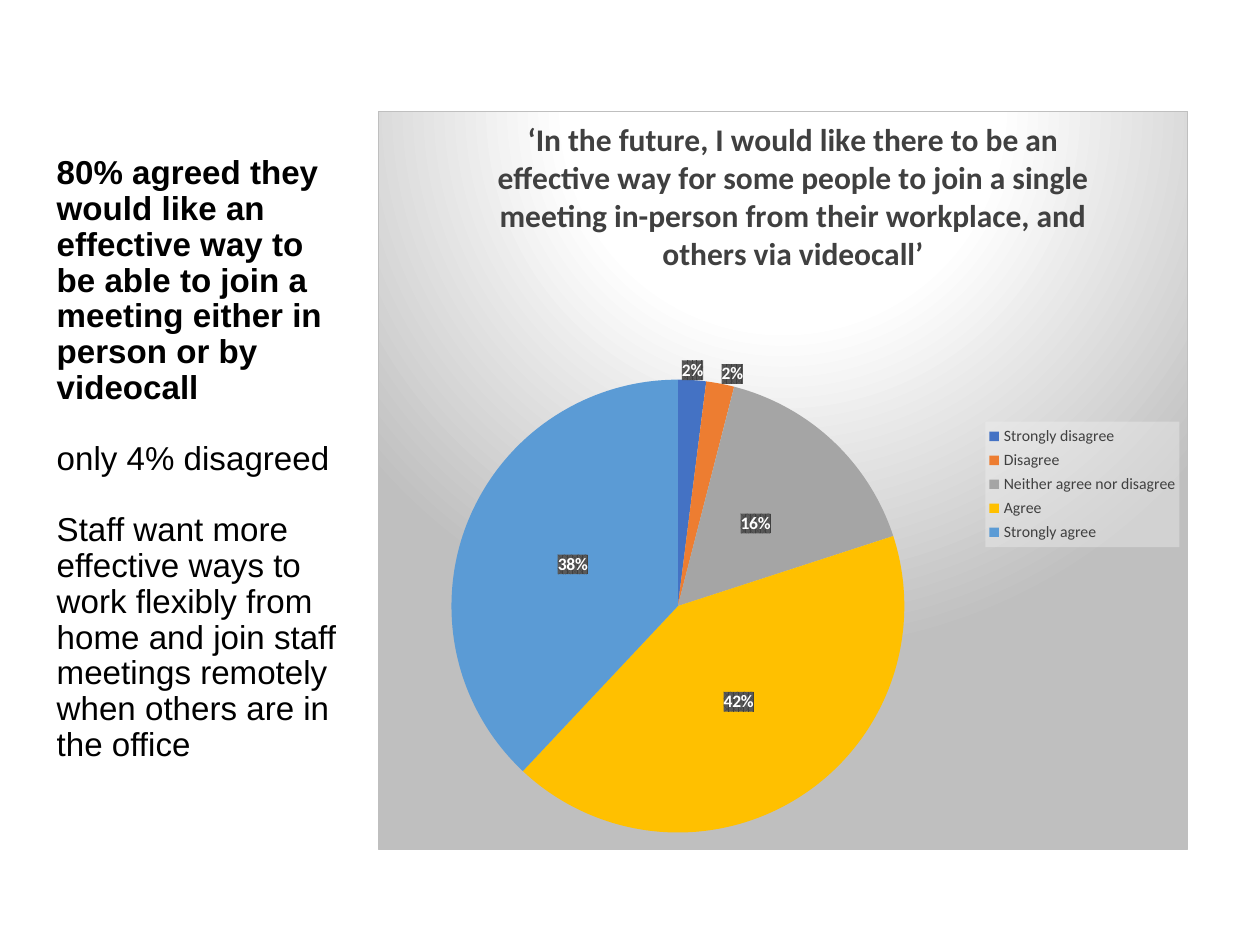
from dataclasses import dataclass

from lxml import etree
from pptx import Presentation
from pptx.chart.data import CategoryChartData
from pptx.dml.color import RGBColor
from pptx.enum.chart import XL_CHART_TYPE, XL_LABEL_POSITION, XL_LEGEND_POSITION
from pptx.enum.text import MSO_ANCHOR, MSO_AUTO_SIZE, PP_ALIGN
from pptx.oxml import parse_xml
from pptx.oxml.ns import nsdecls, qn
from pptx.util import Pt

PIE = XL_CHART_TYPE.PIE
CENTER, OUTSIDE = XL_LABEL_POSITION.CENTER, XL_LABEL_POSITION.OUTSIDE_END
RIGHT = XL_LEGEND_POSITION.RIGHT
LEFT = PP_ALIGN.LEFT
MIDDLE = MSO_ANCHOR.MIDDLE
NO_AUTOFIT = MSO_AUTO_SIZE.NONE

EMU_PER_PX = 9144  # 100 px to the inch
TITLE_ONLY = 5
COLORS = {
    "black": "000000", "white": "FFFFFF", "ink": "404040",
    "label_hatch": "595959", "edge": "BFBFBF", "legend": "F2F2F2",
    "blue": "4472C4", "orange": "ED7D31", "grey": "A5A5A5",
    "gold": "FFC000", "sky": "5B9BD5",
}


@dataclass(frozen=True)
class Answer:
    name: str
    percent: int
    color: str
    label_position: object = CENTER


@dataclass(frozen=True)
class Finding:
    text: str
    bold: bool = False


ANSWERS = [
    Answer("Strongly disagree", 2, "blue", OUTSIDE),
    Answer("Disagree", 2, "orange", OUTSIDE),
    Answer("Neither agree nor disagree", 16, "grey"),
    Answer("Agree", 42, "gold"),
    Answer("Strongly agree", 38, "sky"),
]
FINDINGS = [
    Finding("80% agreed they would like an effective way to be able to join "
            "a meeting either in person or by videocall", bold=True),
    Finding("only 4% disagreed"),
    Finding("Staff want more effective ways to work flexibly from home and join "
            "staff meetings remotely when others are in the office"),
]
QUESTION = ("‘In the future, I would like there to be an effective way for some people "
            "to join a single meeting in-person from their workplace, and others "
            "via videocall’")


def px(length: int) -> int:
    return length * EMU_PER_PX


def format_font(font, size: float, color: str, name: str = "Calibri",
                bold: bool = False) -> None:
    font.name, font.size, font.bold = name, Pt(size), bold
    font.color.rgb = RGBColor.from_string(COLORS[color])


def write_text(paragraph, text: str, *, size: float, color: str,
               name: str = "Calibri", bold: bool = False, align=None,
               line_spacing=None, space_after=None) -> None:
    run = paragraph.add_run()
    run.text = text
    format_font(run.font, size, color, name, bold)
    paragraph.alignment = align
    paragraph.line_spacing = line_spacing
    paragraph.space_after = space_after


def place_part(part, after: str = "", target: str = "", mode: str = "edge",
               **fractions: float) -> None:
    """Give a chart part a manual layout, in fractions of the chart."""
    for old in part.findall(qn("c:layout")):
        part.remove(old)
    layout = etree.Element(qn("c:layout"))
    manual = etree.SubElement(layout, qn("c:manualLayout"))
    settings = {"layoutTarget": target} if target else {}
    settings |= {f"{key}Mode": mode for key in ("x", "y")}
    settings |= fractions
    for tag, value in settings.items():
        etree.SubElement(manual, qn(f"c:{tag}")).set("val", str(value))
    if after:
        part.find(qn(after)).addnext(layout)
    else:
        part.insert(0, layout)


def paint_part(part, fill_xml: str) -> None:
    """Put shape properties before the text properties of a chart part."""
    part.find(qn("c:txPr")).addprevious(
        parse_xml(f'<c:spPr {nsdecls("c", "a")}>{fill_xml}</c:spPr>'))


def color_xml(color: str, extra: str = "") -> str:
    return f'<a:srgbClr val="{COLORS[color]}">{extra}</a:srgbClr>'


def add_findings(slide) -> None:
    title = slide.shapes.title
    title.left, title.top, title.width, title.height = map(px, (35, 168, 242, 457))
    frame = title.text_frame
    frame.word_wrap, frame.auto_size = True, NO_AUTOFIT
    frame.vertical_anchor = MIDDLE
    frame.margin_right, frame.margin_bottom = 0, px(68)
    for i, finding in enumerate(FINDINGS):
        paragraph = frame.add_paragraph() if i else frame.paragraphs[0]
        last = i == len(FINDINGS) - 1
        write_text(paragraph, finding.text, size=18.9, color="black", name="Arial",
                   bold=finding.bold, align=LEFT, line_spacing=0.9,
                   space_after=Pt(0 if last else 20.4))


def format_labels(series, root) -> None:
    labels = series.data_labels
    labels.number_format, labels.number_format_is_linked = "0%", False
    labels.position = CENTER
    format_font(labels.font, 10, "white", bold=True)
    for i, answer in enumerate(ANSWERS):
        if answer.label_position != CENTER:
            label = series.points[i].data_label
            format_font(label.font, 10, "white", bold=True)
            label.position = answer.label_position

    hatch = (f'<a:pattFill prst="pct75"><a:fgClr>{color_xml("ink")}</a:fgClr>'
             f'<a:bgClr>{color_xml("label_hatch")}</a:bgClr></a:pattFill>')
    for part in root.xpath(".//c:dLbls | .//c:dLbl"):
        paint_part(part, hatch)
        part.find(qn("c:showVal")).set("val", "0")
        part.find(qn("c:showPercent")).set("val", "1")
    for part in root.xpath(".//c:dLbl"):
        place_part(part, after="c:idx", mode="factor", x=0, y=0.01)


def add_answer_chart(slide) -> None:
    data = CategoryChartData()
    data.categories = [answer.name for answer in ANSWERS]
    data.add_series("Series 1", [answer.percent for answer in ANSWERS])
    chart = slide.shapes.add_chart(PIE, *map(px, (300, 88, 643, 587)), data).chart
    format_font(chart.font, 10, "black")
    root = chart.element

    # Slices
    plot = chart.plots[0]
    plot.vary_by_categories = True
    series = plot.series[0]
    for i, answer in enumerate(ANSWERS):
        fill = series.points[i].format.fill
        fill.solid()
        fill.fore_color.rgb = RGBColor.from_string(COLORS[answer.color])
    format_labels(series, root)

    # Question
    chart.has_title = True
    write_text(chart.chart_title.text_frame.paragraphs[0], QUESTION,
               size=18, color="ink", bold=True)

    # Legend
    chart.has_legend = True
    legend = chart.legend
    legend.position, legend.include_in_layout = RIGHT, False
    format_font(legend.font, 9, "ink")
    see_through = color_xml("legend", '<a:alpha val="39000"/>')
    legend_part = root.find(".//" + qn("c:legend"))
    paint_part(legend_part, f"<a:solidFill>{see_through}</a:solidFill>")

    # Arrangement inside the chart
    place_part(root.find(".//" + qn("c:plotArea")), target="inner",
               x=0.09, y=0.36, w=0.56, h=0.62)
    place_part(root.find(".//" + qn("c:title")), after="c:tx", x=0.14, y=0)
    place_part(legend_part, after="c:legendPos", x=0.75, y=0.42, w=0.24, h=0.17)

    # Backdrop
    stops = "".join(f'<a:gs pos="{percent * 1000}">{color_xml(color)}</a:gs>'
                    for percent, color in ((0, "white"), (39, "white"), (100, "edge")))
    paint_part(root, f'<a:gradFill><a:gsLst>{stops}</a:gsLst><a:path path="circle">'
               '<a:fillToRect l="50000" t="-80000" r="50000" b="180000"/></a:path>'
               f'</a:gradFill><a:ln w="{Pt(0.75)}"><a:solidFill>{color_xml("edge")}'
               '</a:solidFill></a:ln>')


def main() -> None:
    deck = Presentation()
    deck.slide_width, deck.slide_height = px(1000), px(750)
    slide = deck.slides.add_slide(deck.slide_layouts[TITLE_ONLY])
    add_findings(slide)
    add_answer_chart(slide)
    deck.save("out.pptx")


if __name__ == "__main__":
    main()
